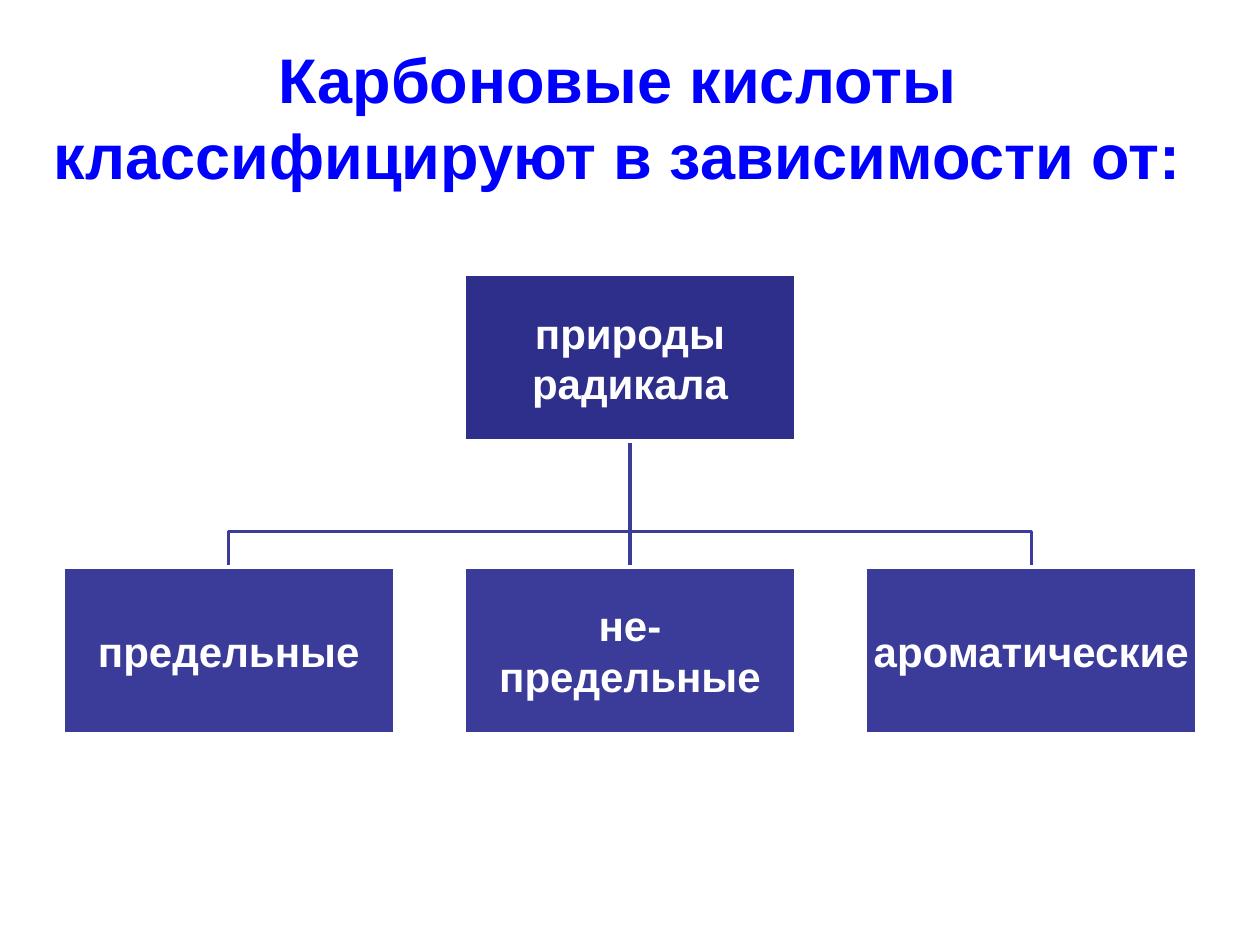
from pptx import Presentation
from pptx.dml.color import RGBColor
from pptx.enum.shapes import MSO_CONNECTOR, MSO_SHAPE
from pptx.enum.text import MSO_ANCHOR, PP_ALIGN
from pptx.util import Inches, Pt
from lxml import etree

RECTANGLE = MSO_SHAPE.RECTANGLE
STRAIGHT = MSO_CONNECTOR.STRAIGHT
MIDDLE = MSO_ANCHOR.MIDDLE
CENTER = PP_ALIGN.CENTER
DRAWING_NS = "http://schemas.openxmlformats.org/drawingml/2006/main"

COLORS = {
    "title": "0000FF",
    "root": "2E2E8B",
    "branch": "3B3B9A",
    "white": "FFFFFF",
}

BOX_WIDTH, BOX_HEIGHT = 2.63, 1.32
CENTER_X, COLUMN_STEP = 5, 3.185
ROOT_TOP, BRANCH_TOP = 2.18, 4.5
ROOT_BOTTOM = ROOT_TOP + BOX_HEIGHT
ELBOW_Y = 4.22


def format_text(text_frame, size, color):
    text_frame.word_wrap = True
    text_frame.vertical_anchor = MIDDLE
    for paragraph in text_frame.paragraphs:
        paragraph.alignment = CENTER
        for run in paragraph.runs:
            run.font.name = "Arial"
            run.font.size = Pt(size)
            run.font.bold = True
            run.font.color.rgb = RGBColor.from_string(COLORS[color])


def set_line(shape, color):
    shape.line.color.rgb = RGBColor.from_string(COLORS[color])
    shape.line.width = Pt(2)


presentation = Presentation()
presentation.slide_width = Inches(10)
presentation.slide_height = Inches(7.5)
slide = presentation.slides.add_slide(presentation.slide_layouts[5])

title = slide.shapes.title
title.left, title.top = Inches(0), Inches(0.3)
title.width, title.height = Inches(9.8), Inches(1.25)
title.text_frame.text = "Карбоновые кислоты классифицируют в зависимости от:"
format_text(title.text_frame, 36, "title")

for side in (1, -1):
    end_x = CENTER_X + side * COLUMN_STEP
    builder = slide.shapes.build_freeform(Inches(CENTER_X), Inches(ROOT_BOTTOM))
    corners = [(CENTER_X, ELBOW_Y), (end_x, ELBOW_Y), (end_x, BRANCH_TOP)]
    builder.add_line_segments([(Inches(x), Inches(y)) for x, y in corners], close=False)
    elbow = builder.convert_to_shape()
    elbow.shadow.inherit = False
    elbow.fill.background()
    set_line(elbow, "branch")

trunk = slide.shapes.add_connector(
    STRAIGHT, Inches(CENTER_X), Inches(ROOT_BOTTOM), Inches(CENTER_X), Inches(BRANCH_TOP)
)
set_line(trunk, "branch")
etree.SubElement(trunk._element.spPr, f"{{{DRAWING_NS}}}effectLst")

boxes = [
    ("природы\nрадикала", 0, ROOT_TOP, "root"),
    ("предельные", -1, BRANCH_TOP, "branch"),
    ("не-\nпредельные", 0, BRANCH_TOP, "branch"),
    ("ароматические", 1, BRANCH_TOP, "branch"),
]
for text, column, top, color in boxes:
    left = CENTER_X + column * COLUMN_STEP - BOX_WIDTH / 2
    box = slide.shapes.add_shape(
        RECTANGLE, Inches(left), Inches(top), Inches(BOX_WIDTH), Inches(BOX_HEIGHT)
    )
    box.shadow.inherit = False
    box.fill.solid()
    box.fill.fore_color.rgb = RGBColor.from_string(COLORS[color])
    set_line(box, "white")
    text_frame = box.text_frame
    text_frame.margin_left = text_frame.margin_right = Inches(0.02)
    text_frame.margin_top = text_frame.margin_bottom = Inches(0.02)
    text_frame.text = text
    format_text(text_frame, 24, "white")

presentation.save("out.pptx")
